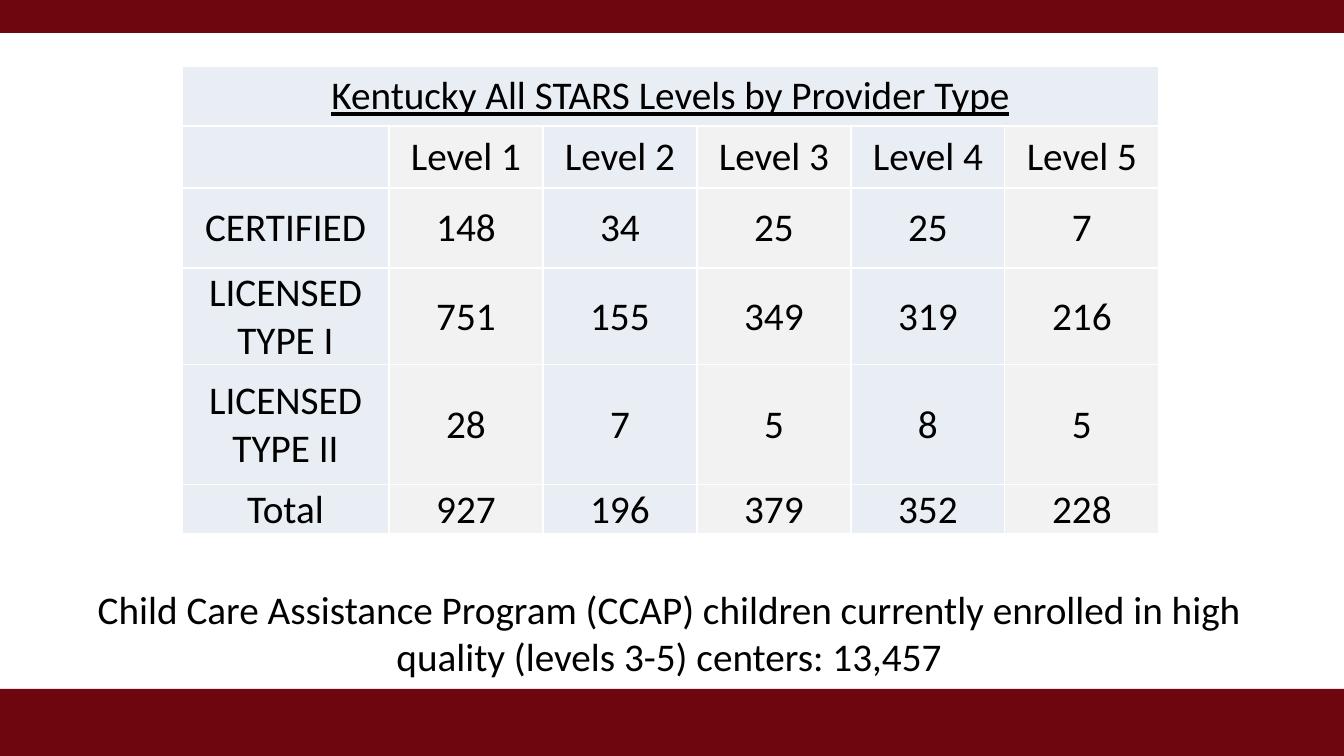
from lxml.etree import SubElement
from pptx import Presentation
from pptx.dml.color import RGBColor
from pptx.enum.shapes import MSO_SHAPE as Preset
from pptx.enum.text import MSO_ANCHOR as Anchor, PP_ALIGN as Align
from pptx.oxml.ns import qn
from pptx.util import Emu, Pt

SCALE = 914400 / 100.8
WIDTH, HEIGHT = 1344, 756
COLORS = {"band": "6E0610", "tint": "E9EDF4", "gray": "F2F2F2",
          "border": "FFFFFF", "text": "000000"}
BODY = {"name": "Calibri", "size": Pt(28), "underline": False}
HEADING = {**BODY, "underline": True}
CELL = {"vertical_anchor": Anchor.MIDDLE, "margin_left": Emu(9144),
        "margin_right": Emu(9144), "margin_top": Emu(9144), "margin_bottom": 0}
COLUMN_WIDTHS = [207] + [154] * 5
ROW_HEIGHTS = [60, 62, 80, 80, 120, 47]
TITLE = "Kentucky All STARS Levels by Provider Type"
LEVELS = [
    ["", *(f"Level {number}" for number in range(1, 6))],
    ["CERTIFIED", 148, 34, 25, 25, 7],
    ["LICENSED TYPE I", 751, 155, 349, 319, 216],
    ["LICENSED TYPE II", 28, 7, 5, 8, 5],
    ["Total", 927, 196, 379, 352, 228],
]
CCAP_NOTE = ("Child Care Assistance Program (CCAP) children currently enrolled "
             "in high quality (levels 3-5) centers: 13,457")


def px(*lengths):
    """Turn pixel lengths into a list of EMU."""
    return [Emu(round(length * SCALE)) for length in lengths]


def color(name):
    """Look up a named colour."""
    return RGBColor.from_string(COLORS[name])


def set_all(target, values):
    """Set attributes from a dict."""
    for name, value in values.items():
        setattr(target, name, value)


def write(text_frame, text, font):
    """Write one centred paragraph."""
    paragraph = text_frame.paragraphs[0]
    paragraph.alignment = Align.CENTER
    run = paragraph.add_run()
    run.text = text
    set_all(run.font, font)
    run.font.color.rgb = color("text")


def add_band(slide, top, height):
    """Add a full-width coloured band."""
    shape = slide.shapes.add_shape(Preset.RECTANGLE, *px(0, top, WIDTH, height))
    shape.shadow.inherit = False
    shape.fill.solid()
    shape.fill.fore_color.rgb = color("band")
    shape.line.fill.background()


def style_cell(cell, fill):
    """Give a cell its margins, borders and fill."""
    set_all(cell, CELL)
    properties = cell._tc.get_or_add_tcPr()
    for side in "LRTB":
        line = SubElement(properties, qn(f"a:ln{side}"), w=str(Pt(1)))
        solid = SubElement(line, qn("a:solidFill"))
        SubElement(solid, qn("a:srgbClr"), val=COLORS["border"])
    cell.fill.solid()
    cell.fill.fore_color.rgb = color(fill)


def add_levels_table(slide, left, top):
    """Add the table of provider types by level."""
    frame = slide.shapes.add_table(
        len(ROW_HEIGHTS), len(COLUMN_WIDTHS),
        *px(left, top, sum(COLUMN_WIDTHS), sum(ROW_HEIGHTS)))
    table = frame.table
    set_all(table, {"first_row": False, "horz_banding": False})
    for column, width in zip(table.columns, px(*COLUMN_WIDTHS)):
        column.width = width
    for row, height in zip(table.rows, px(*ROW_HEIGHTS)):
        row.height = height
    for row_index, row in enumerate(table.rows):
        for column_index, cell in enumerate(row.cells):
            striped = row_index > 0 and column_index % 2 == 1
            style_cell(cell, "gray" if striped else "tint")
    table.cell(0, 0).merge(table.cell(0, len(COLUMN_WIDTHS) - 1))
    write(table.cell(0, 0).text_frame, TITLE, HEADING)
    for row_index, values in enumerate(LEVELS, start=1):
        for column_index, value in enumerate(values):
            if value != "":
                cell = table.cell(row_index, column_index)
                write(cell.text_frame, str(value), BODY)


def add_note(slide, text, left, top, width, height):
    """Add a wrapped, centred text box."""
    box = slide.shapes.add_textbox(*px(left, top, width, height))
    box.text_frame.word_wrap = True
    write(box.text_frame, text, BODY)


def main():
    """Build and save the slide."""
    presentation = Presentation()
    presentation.slide_width, presentation.slide_height = px(WIDTH, HEIGHT)
    slide = presentation.slides.add_slide(presentation.slide_layouts[6])
    add_band(slide, 0, 33)
    add_band(slide, 689, 67)
    add_levels_table(slide, 182, 66)
    add_note(slide, CCAP_NOTE, 38, 580, 1262, 105)
    presentation.save("out.pptx")


if __name__ == "__main__":
    main()
